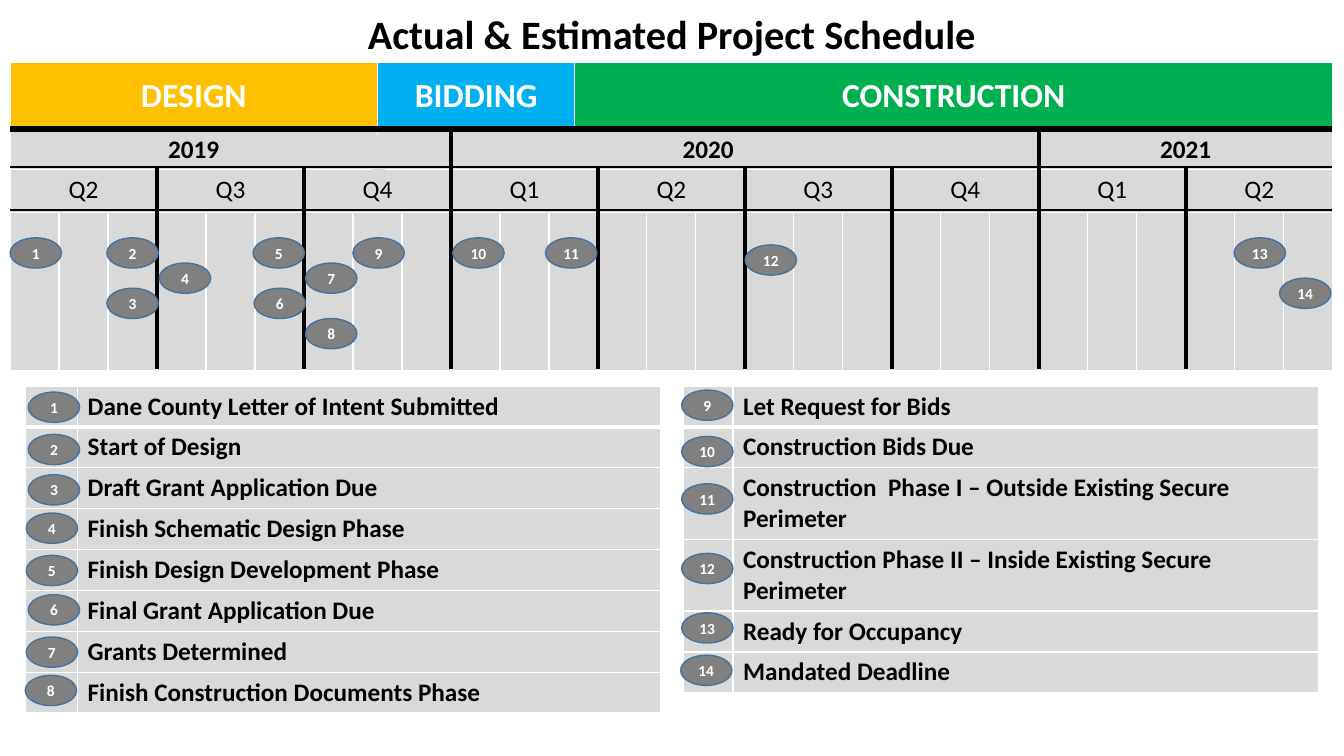
from dataclasses import dataclass

from lxml import etree
from pptx import Presentation
from pptx.dml.color import RGBColor
from pptx.enum.shapes import MSO_CONNECTOR as Connector, MSO_SHAPE as Shape
from pptx.enum.text import MSO_ANCHOR as Anchor, PP_ALIGN as Align
from pptx.oxml.ns import qn
from pptx.util import Cm, Pt

FONT, WHITE, BLACK, LIGHT_GREY = "Calibri", "FFFFFF", "000000", "D9D9D9"
LEFT, RIGHT, BOTTOM = 0.1, 13.21, 3.66
MONTHS = 27
MONTH = 13.12 / MONTHS
QUARTER = 3 * MONTH
HEADER_Y, YEAR_Y, QUARTER_Y = 1.28, 1.66, 2.08


@dataclass
class Band:
    text: str
    span: int
    fill: str = LIGHT_GREY


@dataclass
class BandRow:
    bands: list[Band]
    size: float
    color: str = BLACK
    bold: bool = True
    margin_top: float = 0.05


@dataclass
class Legend:
    left: float
    badge_width: float
    entries: list[str]
    row_heights: list[float]


@dataclass
class Badge:
    number: int
    left: float
    top: float


TIMELINE_ROWS = [
    BandRow([Band("DESIGN", 8, "FFC000"), Band("BIDDING", 5, "00B0F0"),
             Band("CONSTRUCTION", 16, "00B050")], 24, WHITE, margin_top=0.13),
    BandRow([Band("2019", 8), Band("2020", 15), Band("2021", 6)], 18),
    BandRow([Band("Q2", 3), Band("Q3", 3), Band("Q4", 4), Band("Q1", 4), Band("Q2", 3),
             Band("Q3", 3), Band("Q4", 3), Band("Q1", 3), Band("Q2", 3)], 18, bold=False),
    BandRow([Band("", 2 if month in (7, 11) else 1) for month in range(MONTHS)], 18),
]
TIMELINE_HEIGHTS = [0.66, 0.39, 0.42, 1.57]

LEGENDS = [
    Legend(0.25, 0.52, [
        "Dane County Letter of Intent Submitted", "Start of Design",
        "Draft Grant Application Due", "Finish Schematic Design Phase",
        "Finish Design Development Phase", "Final Grant Application Due",
        "Grants Determined", "Finish Construction Documents Phase"], [0.4] * 8),
    Legend(6.78, 0.49, [
        "Let Request for Bids", "Construction Bids Due",
        "Construction  Phase I – Outside Existing Secure Perimeter",
        "Construction Phase II – Inside Existing Secure Perimeter",
        "Ready for Occupancy", "Mandated Deadline"], [0.4, 0.4, 0.7, 0.7, 0.4, 0.4]),
]

LEGEND_BADGES = [
    Badge(1, 0.28, 3.89), Badge(2, 0.28, 4.31), Badge(3, 0.28, 4.71), Badge(4, 0.26, 5.09),
    Badge(5, 0.26, 5.51), Badge(6, 0.28, 5.9), Badge(7, 0.26, 6.32), Badge(8, 0.25, 6.7),
    Badge(9, 6.76, 3.87), Badge(10, 6.76, 4.33), Badge(11, 6.76, 4.8), Badge(12, 6.76, 5.49),
    Badge(13, 6.76, 6.08), Badge(14, 6.75, 6.5),
]
TIMELINE_BADGES = [
    Badge(1, 0.1, 2.36), Badge(2, 1.06, 2.36), Badge(3, 1.06, 2.86), Badge(4, 1.58, 2.61),
    Badge(5, 2.51, 2.36), Badge(6, 2.52, 2.86), Badge(7, 3.03, 2.61), Badge(8, 3.03, 3.16),
    Badge(9, 3.5, 2.36), Badge(10, 4.49, 2.36), Badge(11, 5.41, 2.36), Badge(12, 7.39, 2.43),
    Badge(13, 12.24, 2.36), Badge(14, 12.69, 2.76),
]


def length(inches: float) -> Cm:
    return Cm(inches * 2.54)


def rgb(color: str) -> RGBColor:
    return RGBColor.from_string(color)


def format_text(text_frame, size: float, color: str, bold: bool, align: Align) -> None:
    for paragraph in text_frame.paragraphs:
        paragraph.alignment = align
        for run in paragraph.runs:
            run.font.name, run.font.size, run.font.bold = FONT, Pt(size), bold
            run.font.color.rgb = rgb(color)


def style_cell(cell, fill: str, bottom_width: float = 1) -> None:
    """Set white borders, then the fill, in the order the format requires."""
    properties = cell._tc.get_or_add_tcPr()
    for side in ("lnL", "lnR", "lnT", "lnB"):
        width = bottom_width if side == "lnB" else 1
        border = etree.SubElement(properties, qn(f"a:{side}"), w=str(Pt(width)))
        solid = etree.SubElement(border, qn("a:solidFill"))
        etree.SubElement(solid, qn("a:srgbClr"), val=WHITE)
    cell.fill.solid()
    cell.fill.fore_color.rgb = rgb(fill)


def add_grid(slide, left: float, top: float, widths: list[float], heights: list[float]):
    table = slide.shapes.add_table(len(heights), len(widths), length(left), length(top),
                                   length(sum(widths)), length(sum(heights))).table
    table.first_row = table.horz_banding = False
    for column, width in zip(table.columns, widths):
        column.width = length(width)
    for row, height in zip(table.rows, heights):
        row.height = length(height)
    return table


def add_timeline(slide) -> None:
    widths = [MONTH] * MONTHS
    widths[11:12] = [0.53 * MONTH, 0.47 * MONTH]
    widths[7:8] = [MONTH / 2, MONTH / 2]
    table = add_grid(slide, LEFT, 0.62, widths, TIMELINE_HEIGHTS)
    for row_index, row in enumerate(TIMELINE_ROWS):
        column = 0
        for band in row.bands:
            end = column + band.span
            for index in range(column, end):
                style_cell(table.cell(row_index, index), band.fill, 3 if row_index == 0 else 1)
            cell = table.cell(row_index, column)
            if band.span > 1:
                cell.merge(table.cell(row_index, end - 1))
            cell.margin_top = length(row.margin_top)
            cell.text_frame.text = band.text
            format_text(cell.text_frame, row.size, row.color, row.bold, Align.CENTER)
            column = end


def add_legend(slide, legend: Legend) -> None:
    widths = [legend.badge_width, 6.3 - legend.badge_width]
    table = add_grid(slide, legend.left, 3.83, widths, legend.row_heights)
    for row, entry in enumerate(legend.entries):
        for column in range(2):
            style_cell(table.cell(row, column), LIGHT_GREY, 3 if row == 0 else 1)
        text_frame = table.cell(row, 1).text_frame
        text_frame.text = entry
        format_text(text_frame, 18, BLACK, True, Align.LEFT)


def add_line(slide, x1: float, y1: float, x2: float, y2: float, width: float) -> None:
    line = slide.shapes.add_connector(Connector.STRAIGHT, length(x1), length(y1),
                                      length(x2), length(y2))
    line.line.color.rgb = rgb(BLACK)
    line.line.width = Pt(width)
    etree.SubElement(line._element.spPr, qn("a:effectLst"))


def add_filled_shape(slide, kind: Shape, left: float, top: float, width: float,
                     height: float, fill: str):
    shape = slide.shapes.add_shape(kind, length(left), length(top), length(width), length(height))
    shape.shadow.inherit = False
    shape.fill.solid()
    shape.fill.fore_color.rgb = rgb(fill)
    shape.line.fill.background()
    return shape


def add_badge(slide, badge: Badge) -> None:
    shape = add_filled_shape(slide, Shape.OVAL, badge.left, badge.top, 0.51, 0.3, "808080")
    shape.line.color.rgb = rgb("43739E")
    shape.line.width = Pt(1)
    text_frame = shape.text_frame
    text_frame.margin_left = text_frame.margin_right = 0
    text_frame.vertical_anchor = Anchor.MIDDLE
    text_frame.text = str(badge.number)
    format_text(text_frame, 11, WHITE, True, Align.CENTER)


def main() -> None:
    presentation = Presentation()
    presentation.slide_width, presentation.slide_height = length(13.33), length(7.5)
    slide = presentation.slides.add_slide(presentation.slide_layouts[5])

    # Title
    title = slide.shapes.title
    title.left, title.top, title.width, title.height = map(length, (0, 0.08, 13.33, 0.5))
    title.text_frame.text = "Actual & Estimated Project Schedule"
    title.text_frame.vertical_anchor = Anchor.MIDDLE
    format_text(title.text_frame, 28.8, BLACK, True, Align.CENTER)

    # Tables
    add_timeline(slide)
    for legend in LEGENDS:
        add_legend(slide, legend)

    # Cover for the cell border inside 2019, then the rules
    add_filled_shape(slide, Shape.RECTANGLE, 3.69, 1.34, 0.13, 0.44, LIGHT_GREY)
    for y, width in ((HEADER_Y, 4.5), (YEAR_Y, 1.5), (QUARTER_Y, 1.5)):
        add_line(slide, LEFT, y, RIGHT, y, width)
    for quarter in range(1, 9):
        x = LEFT + quarter * QUARTER
        starts_year = quarter in (3, 7)
        add_line(slide, x, HEADER_Y if starts_year else YEAR_Y, x, BOTTOM, 2.25)

    # Numbered milestones
    for badge in LEGEND_BADGES + TIMELINE_BADGES:
        add_badge(slide, badge)

    presentation.save("out.pptx")


if __name__ == "__main__":
    main()
